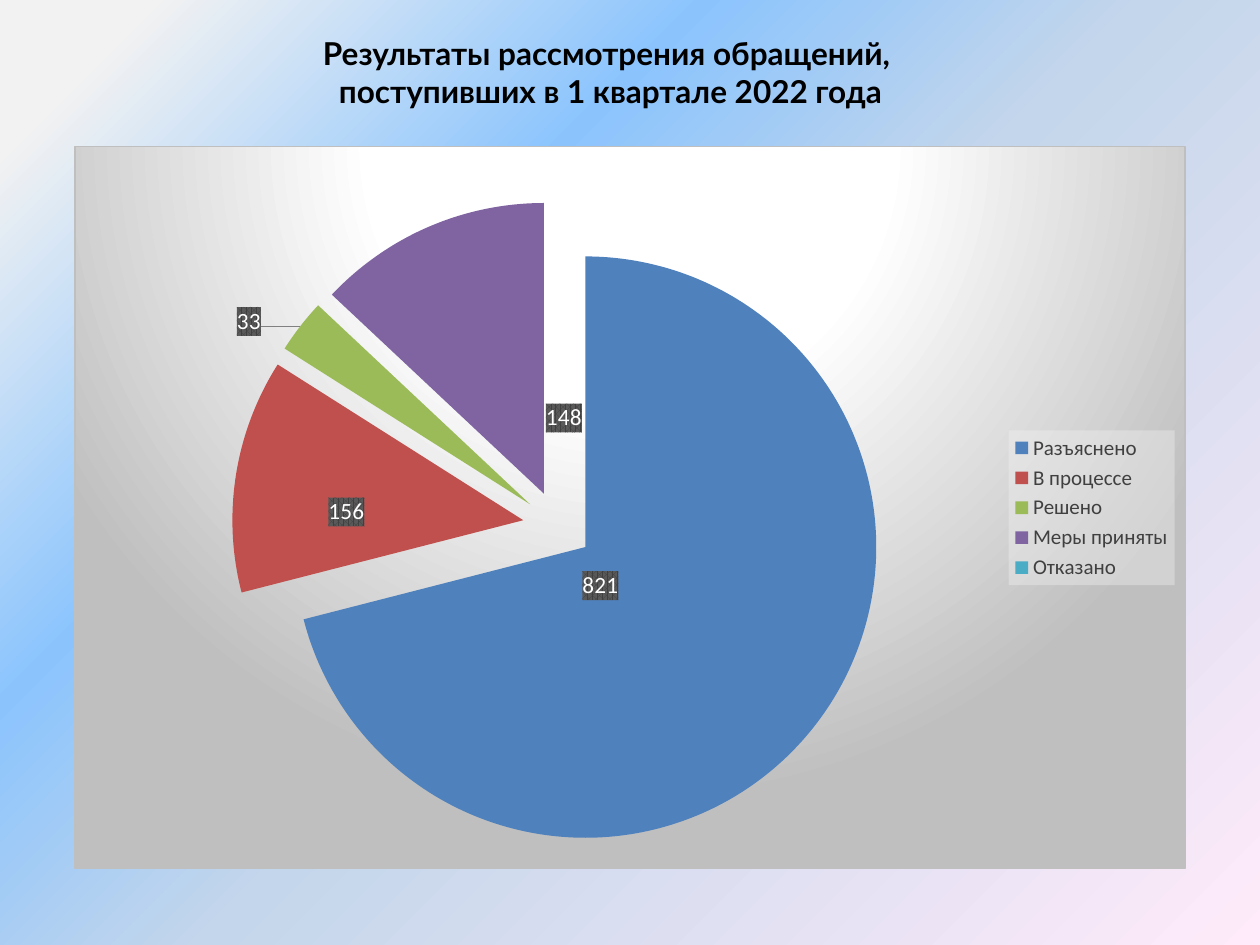
from pptx import Presentation, util as u
from pptx.chart.data import CategoryChartData
from pptx.dml.color import RGBColor
from pptx.enum import chart as ch, text
from pptx.oxml import parse_xml
from pptx.oxml.ns import nsdecls

BLACK = RGBColor(0x00, 0x00, 0x00)
WHITE = RGBColor(0xFF, 0xFF, 0xFF)
LEGEND_GRAY = RGBColor(0x40, 0x40, 0x40)
BLUE = RGBColor(0x4F, 0x81, 0xBD)
RED = RGBColor(0xC0, 0x50, 0x4D)
GREEN = RGBColor(0x9B, 0xBB, 0x59)
PURPLE = RGBColor(0x80, 0x64, 0xA2)
TEAL = RGBColor(0x4B, 0xAC, 0xC6)


def gradient(stops, direction):
    marks = "".join(
        f'<a:gs pos="{pos * 1000}"><a:srgbClr val="{color}"/></a:gs>' for pos, color in stops
    )
    return f'<a:gradFill {nsdecls("a")} rotWithShape="1"><a:gsLst>{marks}</a:gsLst>{direction}</a:gradFill>'


def chart_xml(tag, content):
    return parse_xml(f'<c:{tag} {nsdecls("c", "a")}>{content}</c:{tag}>')


prs = Presentation()
prs.slide_width, prs.slide_height = u.Inches(10), u.Inches(7.5)
slide = prs.slides.add_slide(prs.slide_layouts[5])

background = slide.background.fill
background.solid()
background_props = slide.element.cSld.find(".//{*}bgPr")
background_props.replace(
    background_props[0],
    parse_xml(gradient(
        [(7, "F2F2F2"), (32, "8BC4FD"), (52, "C4D6EB"), (100, "FFEBFA")],
        '<a:lin ang="2700000" scaled="0"/>',
    )),
)

heading = slide.shapes.title
heading.left, heading.top = u.Inches(0.91), u.Inches(0.22)
heading.width, heading.height = u.Inches(7.87), u.Inches(0.71)
heading_text = heading.text_frame
heading_text.word_wrap = True
heading_text.auto_size = text.MSO_AUTO_SIZE.NONE
heading_text.vertical_anchor = text.MSO_ANCHOR.TOP
for index, line in enumerate(
    ["Результаты рассмотрения обращений, ", "поступивших в 1 квартале 2022 года"]
):
    paragraph = heading_text.add_paragraph() if index else heading_text.paragraphs[0]
    paragraph.alignment = text.PP_ALIGN.CENTER
    run = paragraph.add_run()
    run.text = line
    run.font.name, run.font.size, run.font.bold = "Lato", u.Pt(18), True
    run.font.color.rgb = BLACK

outcomes = [
    ("Разъяснено", 821, BLUE, -0.09, -0.07),
    ("В процессе ", 156, RED, -0.03, 0.02),
    ("Решено ", 33, GREEN, -0.15, -0.13),
    ("Меры приняты", 148, PURPLE, 0.07, 0.08),
    ("Отказано ", 3, TEAL, 0.06, -0.22),
]
total = sum(outcome[1] for outcome in outcomes)
shares = CategoryChartData()
shares.categories = [outcome[0] for outcome in outcomes]
shares.add_series("Series 1", [round(100 * outcome[1] / total) for outcome in outcomes])
chart = slide.shapes.add_chart(
    ch.XL_CHART_TYPE.PIE, u.Inches(0.59), u.Inches(1.16), u.Inches(8.82), u.Inches(5.74), shares
).chart
chart.has_title = False
chart.font.name, chart.font.size = "Calibri", u.Pt(10)
chart.font.color.rgb = BLACK

chart_space = chart.element
chart_space.chart.addnext(chart_xml(
    "spPr",
    gradient(
        [(0, "FFFFFF"), (39, "FFFFFF"), (100, "BFBFBF")],
        '<a:path path="circle"><a:fillToRect l="50000" t="-80000" r="50000" b="180000"/></a:path>',
    )
    + '<a:ln w="9525"><a:solidFill><a:srgbClr val="BFBFBF"/></a:solidFill></a:ln>',
))

plot_area = chart_space.chart.plotArea
for old_layout in plot_area.findall("{*}layout"):
    plot_area.remove(old_layout)
plot_area.insert(0, chart_xml(
    "layout",
    '<c:manualLayout><c:layoutTarget val="inner"/><c:xMode val="edge"/><c:yMode val="edge"/>'
    '<c:x val="0.14"/><c:y val="0.074"/><c:w val="0.59"/><c:h val="0.902"/></c:manualLayout>',
))

chart.has_legend = True
legend = chart.legend
legend.position = ch.XL_LEGEND_POSITION.RIGHT
legend.include_in_layout = False
legend.font.name, legend.font.size = "Calibri", u.Pt(12)
legend.font.color.rgb = LEGEND_GRAY
legend.font._element.getparent().getparent().getparent().addprevious(chart_xml(
    "spPr",
    '<a:solidFill><a:srgbClr val="F2F2F2"><a:alpha val="39000"/></a:srgbClr></a:solidFill>',
))

pie = chart.plots[0]
pie.vary_by_categories = True
results = pie.series[0]
labels = results.data_labels
labels.show_percentage, labels.show_value = True, False
labels.position = ch.XL_LABEL_POSITION.CENTER
labels.font.name, labels.font.size, labels.font.bold = "Calibri", u.Pt(13.3), True
labels.font.color.rgb = WHITE
labels._element.append(chart_xml(
    "leaderLines",
    '<c:spPr><a:ln w="9525"><a:solidFill><a:srgbClr val="808080"/></a:solidFill></a:ln></c:spPr>',
))

for index, (name, count, color, shift_x, shift_y) in enumerate(outcomes):
    point = results.points[index]
    point.format.fill.solid()
    point.format.fill.fore_color.rgb = color
    label = point.data_label
    run = label.text_frame.paragraphs[0].add_run()
    run.text = str(count)
    run.font.name, run.font.size, run.font.bold = "Calibri", u.Pt(13.3), False
    run.font.color.rgb = WHITE
    label.position = ch.XL_LABEL_POSITION.CENTER
    rich_text = label.text_frame._txBody.getparent()
    rich_text.addprevious(chart_xml(
        "layout",
        f'<c:manualLayout><c:x val="{shift_x}"/><c:y val="{shift_y}"/></c:manualLayout>',
    ))
    rich_text.addnext(chart_xml(
        "spPr",
        '<a:pattFill prst="pct75"><a:fgClr><a:srgbClr val="404040"/></a:fgClr>'
        '<a:bgClr><a:srgbClr val="595959"/></a:bgClr></a:pattFill>',
    ))

results._element.find("{*}dPt").addprevious(
    parse_xml(f'<c:explosion {nsdecls("c")} val="12"/>')
)

prs.save("out.pptx")
